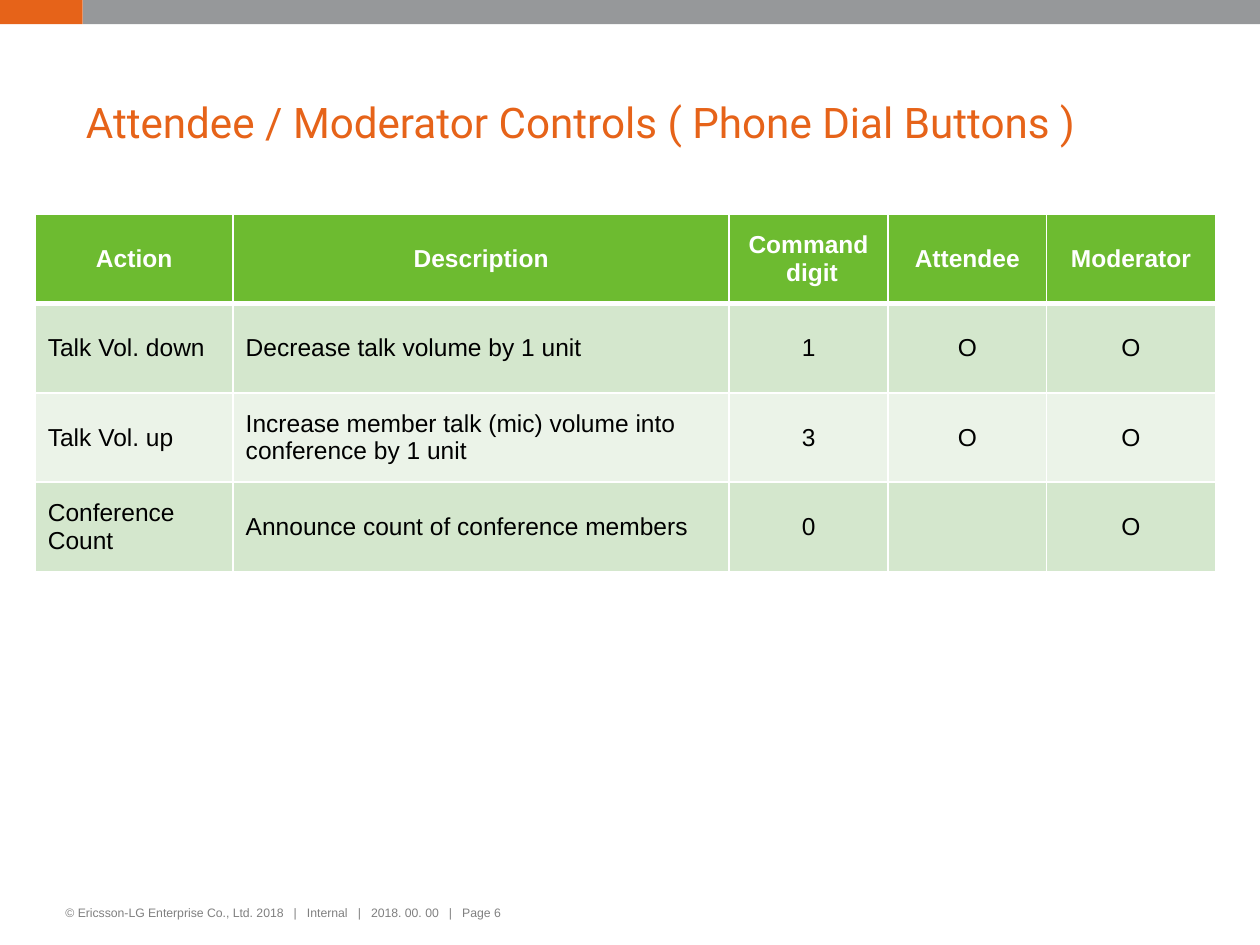
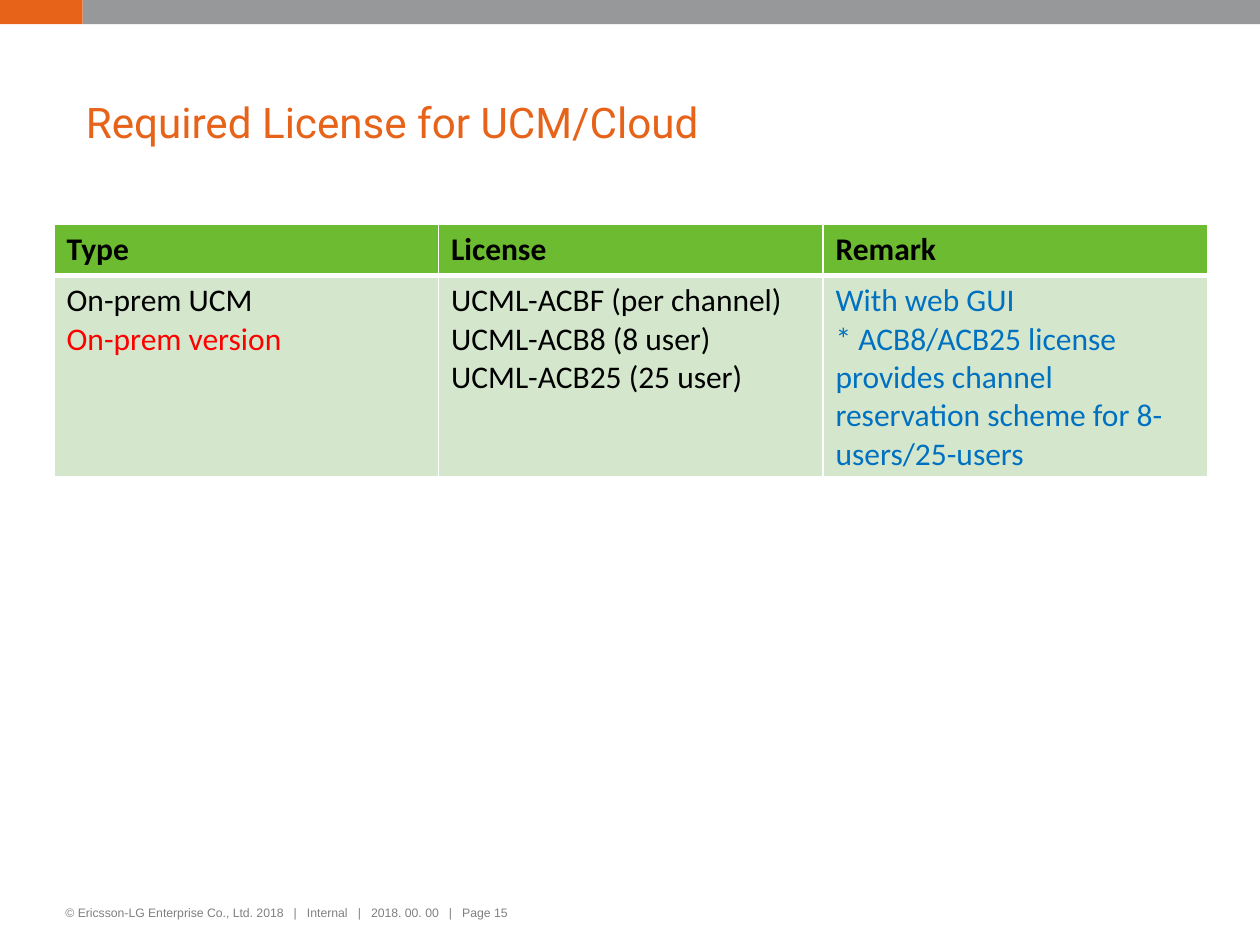
"""Build two slides on conference controls and licenses."""
from dataclasses import dataclass

import lxml.etree
import pptx
import pptx.dml.color
import pptx.enum.shapes
import pptx.enum.text
import pptx.oxml.ns
import pptx.util

Cm = pptx.util.Cm
Pt = pptx.util.Pt
RGB = pptx.dml.color.RGBColor.from_string
ALIGN = pptx.enum.text.PP_ALIGN
ANCHOR = pptx.enum.text.MSO_ANCHOR


@dataclass(frozen=True)
class Theme:
    """Colours, fonts and type sizes of the slides."""
    orange: str = "E66319"
    gray: str = "96989A"
    footer_gray: str = "808080"
    green: str = "6DBB30"
    bands: tuple = ("D4E7CD", "EBF3E8")
    white: str = "FFFFFF"
    black: str = "000000"
    red: str = "FF0000"
    blue: str = "0070C0"
    title_font: str = "Roboto"
    body_font: str = "Arial"
    license_font: str = "Calibri"
    title_size: float = 24.1
    footer_size: float = 7
    controls_size: float = 14
    license_size: float = 18


THEME = Theme()


@dataclass(frozen=True)
class TableStyle:
    """Text settings of one table."""
    font: str
    size: float
    header_color: str
    anchor: ANCHOR
    header_align: ALIGN
    column_aligns: tuple


def style_font(font, name, size, color, bold=False):
    """Set the face, size, colour and weight of a font."""
    font.name = name
    font.size = Pt(size)
    font.bold = bold
    font.color.rgb = RGB(color)


def set_margins(frame, horizontal, vertical):
    """Give a text frame equal side margins and equal top and bottom margins."""
    frame.margin_left = frame.margin_right = Cm(horizontal)
    frame.margin_top = frame.margin_bottom = Cm(vertical)


def add_band(slide, left, width, color):
    """Add one part of the bar along the top edge."""
    shape = slide.shapes.add_shape(
        pptx.enum.shapes.MSO_SHAPE.RECTANGLE, Cm(left), 0, Cm(width), Cm(0.49))
    shape.shadow.inherit = False
    shape.fill.solid()
    shape.fill.fore_color.rgb = RGB(color)
    shape.line.fill.background()


def add_footer(slide, page):
    """Add the copyright line with the page number."""
    box = slide.shapes.add_textbox(Cm(1.17), Cm(18.14), Cm(16.87), Cm(0.71))
    frame = box.text_frame
    frame.word_wrap = True
    set_margins(frame, 0.15, 0.1)
    frame.text = ("© Ericsson-LG Enterprise Co., Ltd. 2018   |   Internal   |   "
                  f"2018. 00. 00   |   Page {page}")
    style_font(frame.paragraphs[0].font, THEME.body_font, THEME.footer_size,
               THEME.footer_gray)


def set_title(slide, text):
    """Place and format the title placeholder."""
    title = slide.shapes.title
    title.left, title.top = Cm(1.37), Cm(1.47)
    title.width, title.height = Cm(22.66), Cm(2.08)
    frame = title.text_frame
    frame.text = text
    frame.auto_size = pptx.enum.text.MSO_AUTO_SIZE.NONE
    frame.vertical_anchor = ANCHOR.MIDDLE
    set_margins(frame, 0.36, 0.18)
    paragraph = frame.paragraphs[0]
    paragraph.alignment = ALIGN.LEFT
    paragraph.line_spacing = 0.9
    style_font(paragraph.font, THEME.title_font, THEME.title_size, THEME.orange)


def add_content_slide(presentation, title, page):
    """Add a slide with the shared bar, title and footer."""
    slide = presentation.slides.add_slide(presentation.slide_layouts[5])
    add_footer(slide, page)
    add_band(slide, 0, 1.67, THEME.orange)
    add_band(slide, 1.67, 23.73, THEME.gray)
    set_title(slide, title)
    return slide


def set_borders(cell, row_index):
    """Draw white cell borders, thicker below the header row."""
    widths = {"L": 1, "R": 1, "T": 3 if row_index == 1 else 1,
              "B": 3 if row_index == 0 else 1}
    properties = cell._tc.get_or_add_tcPr()
    for position, (side, width) in enumerate(widths.items()):
        line = lxml.etree.Element(pptx.oxml.ns.qn(f"a:ln{side}"), w=str(Pt(width)))
        fill = lxml.etree.SubElement(line, pptx.oxml.ns.qn("a:solidFill"))
        lxml.etree.SubElement(fill, pptx.oxml.ns.qn("a:srgbClr"), val=THEME.white)
        properties.insert(position, line)


def fill_cell(cell, text, row_index, column_index, style):
    """Write and format one table cell."""
    is_header = row_index == 0
    cell.text = text
    cell.vertical_anchor = style.anchor
    cell.fill.solid()
    cell.fill.fore_color.rgb = RGB(
        THEME.green if is_header else THEME.bands[(row_index - 1) % 2])
    set_borders(cell, row_index)
    for paragraph in cell.text_frame.paragraphs:
        paragraph.alignment = (style.header_align if is_header
                               else style.column_aligns[column_index])
        style_font(paragraph.font, style.font, style.size,
                   style.header_color if is_header else THEME.black, is_header)


def add_styled_table(slide, left, top, widths, heights, rows, style):
    """Add a table with a green header and banded rows."""
    table = slide.shapes.add_table(
        len(rows), len(widths), Cm(left), Cm(top),
        Cm(sum(widths)), Cm(sum(heights))).table
    table.first_row = table.horz_banding = False
    for column, width in zip(table.columns, widths):
        column.width = Cm(width)
    for row, height in zip(table.rows, heights):
        row.height = Cm(height)
    for row_index, texts in enumerate(rows):
        for column_index, text in enumerate(texts):
            fill_cell(table.cell(row_index, column_index), text,
                      row_index, column_index, style)
    return table


def color_paragraphs(paragraphs, color):
    """Recolour the given paragraphs."""
    for paragraph in paragraphs:
        paragraph.font.color.rgb = RGB(color)


def add_controls_slide(presentation):
    """Add the slide on dial button controls."""
    slide = add_content_slide(
        presentation, "Attendee / Moderator Controls ( Phone Dial Buttons )", 6)
    rows = [
        ("Action", "Description", "Command\n digit", "Attendee", "Moderator"),
        ("Talk Vol. down", "Decrease talk volume by 1 unit", "1", "O", "O"),
        ("Talk Vol. up",
         "Increase member talk (mic) volume into conference by 1 unit",
         "3", "O", "O"),
        ("Conference\nCount", "Announce count of conference members", "0", "", "O"),
    ]
    style = TableStyle(THEME.body_font, THEME.controls_size, THEME.white,
                       ANCHOR.MIDDLE, ALIGN.CENTER,
                       (ALIGN.LEFT,) * 2 + (ALIGN.CENTER,) * 3)
    add_styled_table(slide, 0.71, 4.32, (3.99, 10, 3.2, 3.2, 3.4),
                     (1.8,) * len(rows), rows, style)


def add_license_slide(presentation):
    """Add the slide on required licenses."""
    slide = add_content_slide(presentation, "Required License for UCM/Cloud", 15)
    rows = [
        ("Type", "License", "Remark"),
        ("On-prem UCM\nOn-prem version",
         "UCML-ACBF (per channel)\nUCML-ACB8 (8 user)\nUCML-ACB25 (25 user)",
         "With web GUI\n* ACB8/ACB25 license provides channel reservation "
         "scheme for 8-users/25-users"),
    ]
    style = TableStyle(THEME.license_font, THEME.license_size, THEME.black,
                       ANCHOR.TOP, ALIGN.LEFT, (ALIGN.LEFT,) * 3)
    table = add_styled_table(slide, 1.09, 4.52, (7.75,) * 3, (1.03, 2.52),
                             rows, style)
    color_paragraphs(table.cell(1, 0).text_frame.paragraphs[1:], THEME.red)
    color_paragraphs(table.cell(1, 2).text_frame.paragraphs, THEME.blue)


def main():
    """Build and save the presentation."""
    presentation = pptx.Presentation()
    presentation.slide_width, presentation.slide_height = Cm(25.4), Cm(19.05)
    add_controls_slide(presentation)
    add_license_slide(presentation)
    presentation.save("out.pptx")


if __name__ == "__main__":
    main()
